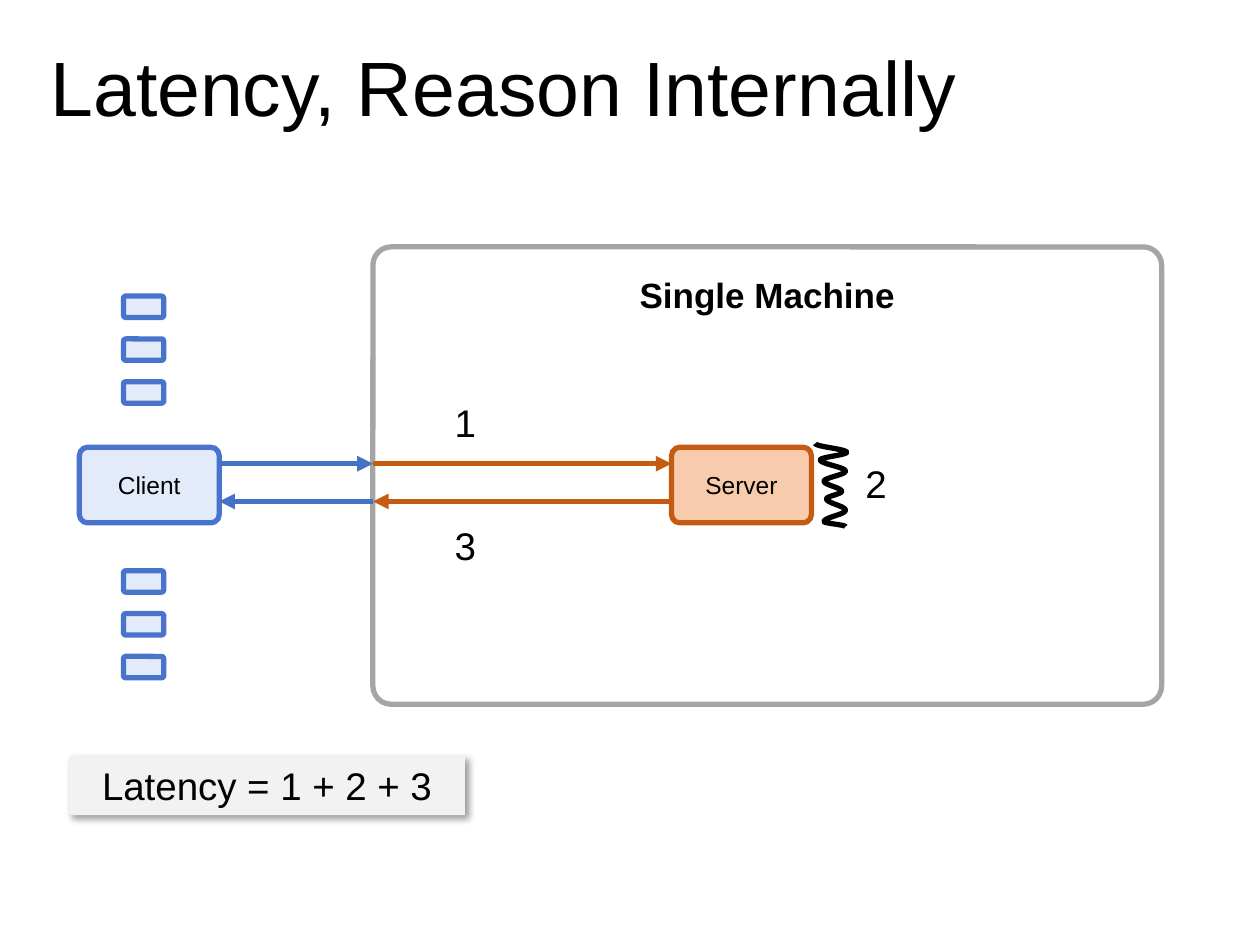
import math
from lxml import etree
from pptx import Presentation
from pptx import util as u
from pptx.dml.color import RGBColor
from pptx.enum import shapes, text
from pptx.oxml import parse_xml
from pptx.oxml.ns import nsdecls, qn

COLORS = {
    "black": "000000", "client": "E3EAF9", "client_edge": "4974CB",
    "request": "4472C4", "server": "F8CBAD", "server_edge": "C55A11",
    "machine_edge": "A5A5A5", "result": "F2F2F2",
}
rgb = {name: RGBColor.from_string(value) for name, value in COLORS.items()}

prs = Presentation()
prs.slide_width, prs.slide_height = u.Inches(10), u.Inches(7.5)
COL, ROW = prs.slide_width / 100, prs.slide_height / 75
slide = prs.slides.add_slide(prs.slide_layouts[5])


def add_box(x, y, w, h, fill=None, edge=None, adj=None):
    kind = shapes.MSO_SHAPE.RECTANGLE if adj is None else shapes.MSO_SHAPE.ROUNDED_RECTANGLE
    sp = slide.shapes.add_shape(kind, int(x * COL), int(y * ROW), int(w * COL), int(h * ROW))
    sp.shadow.inherit = False
    if adj is not None:
        sp.adjustments[0] = adj
    if fill:
        sp.fill.solid()
        sp.fill.fore_color.rgb = rgb[fill]
    else:
        sp.fill.background()
    if edge:
        sp.line.color.rgb = rgb[edge]
        sp.line.width = u.Pt(3)
    else:
        sp.line.fill.background()
    return sp


def write(sp, words, size, align=text.PP_ALIGN.CENTER, bold=False):
    tf = sp.text_frame
    tf.text = words
    p = tf.paragraphs[0]
    p.alignment = align
    font = p.runs[0].font
    font.name, font.size, font.bold = "Arial", u.Pt(size), bold
    font.color.rgb = rgb["black"]
    return tf


title = slide.shapes.title
title.left, title.top = int(3 * COL), 0
title.width, title.height = int(94 * COL), int(14.5 * ROW)
tf = write(title, "Latency, Reason Internally", 44, text.PP_ALIGN.LEFT)
tf.vertical_anchor = text.MSO_ANCHOR.MIDDLE
tf.paragraphs[0].line_spacing = 0.9

machine = add_box(29.6, 19.6, 62.6, 36.3, edge="machine_edge", adj=0.04)
tf = write(machine, "Single Machine", 20, bold=True)
tf.vertical_anchor = text.MSO_ANCHOR.TOP
tf.margin_top = int(1.7 * ROW)

for first_row in (23.5, 45.3):
    for i in range(3):
        add_box(9.8, first_row + 3.4 * i, 3.2, 1.7, "client", "client_edge", 0.11)

for name, x in (("Client", 6.3), ("Server", 53.3)):
    key = name.lower()
    write(add_box(x, 35.5, 11.1, 6, key, key + "_edge", 0.11), name, 14)

for left, right, color in ((17.4, 29.6, "request"), (29.6, 53.3, "server_edge")):
    for start, end, y in ((left, right, 36.8), (right, left, 39.8)):
        arrow = slide.shapes.add_connector(
            shapes.MSO_CONNECTOR.STRAIGHT,
            int(start * COL), int(y * ROW), int(end * COL), int(y * ROW))
        arrow.line.color.rgb = rgb[color]
        arrow.line.width = u.Pt(3)
        etree.SubElement(arrow.line._get_or_add_ln(), qn("a:tailEnd"), type="triangle")
        etree.SubElement(arrow._element.spPr, qn("a:effectLst"))

turns = [(64.7, 35.2), (67.2, 35.9), (65.1, 36.5), (67.1, 37.4), (65.4, 38.2),
         (66.8, 39), (65.6, 39.6), (67.1, 40.5), (65.4, 41.4), (67.1, 41.8)]
STEPS = 12
points = []
for (x0, y0), (x1, y1) in zip(turns, turns[1:]):
    for i in range(1, STEPS + 1):
        t = i / STEPS
        ease = (1 - math.cos(math.pi * t)) / 2
        points.append(((x0 + (x1 - x0) * ease) * COL, (y0 + (y1 - y0) * t) * ROW))
builder = slide.shapes.build_freeform(int(turns[0][0] * COL), int(turns[0][1] * ROW))
builder.add_line_segments(points, close=False)
work = builder.convert_to_shape()
work.shadow.inherit = False
work.fill.background()
work.line.color.rgb = rgb["black"]
work.line.width = u.Pt(3)

for label, x, y in (("1", 35.1, 31.2), ("2", 67.7, 36), ("3", 35.1, 40.9)):
    sp = slide.shapes.add_textbox(int(x * COL), int(y * ROW), int(3.7 * COL), int(4.7 * ROW))
    write(sp, label, 22, text.PP_ALIGN.LEFT).word_wrap = False

result = add_box(5.5, 60, 31.4, 4.7, "result")
write(result, "Latency = 1 + 2 + 3", 22)
result._element.spPr.find(qn("a:effectLst")).append(parse_xml(
    f'<a:outerShdw {nsdecls("a")} blurRad="50800" dist="38100" dir="2700000" algn="tl" '
    f'rotWithShape="0"><a:srgbClr val="{COLORS["black"]}"><a:alpha val="40000"/>'
    '</a:srgbClr></a:outerShdw>'))

prs.save("out.pptx")
